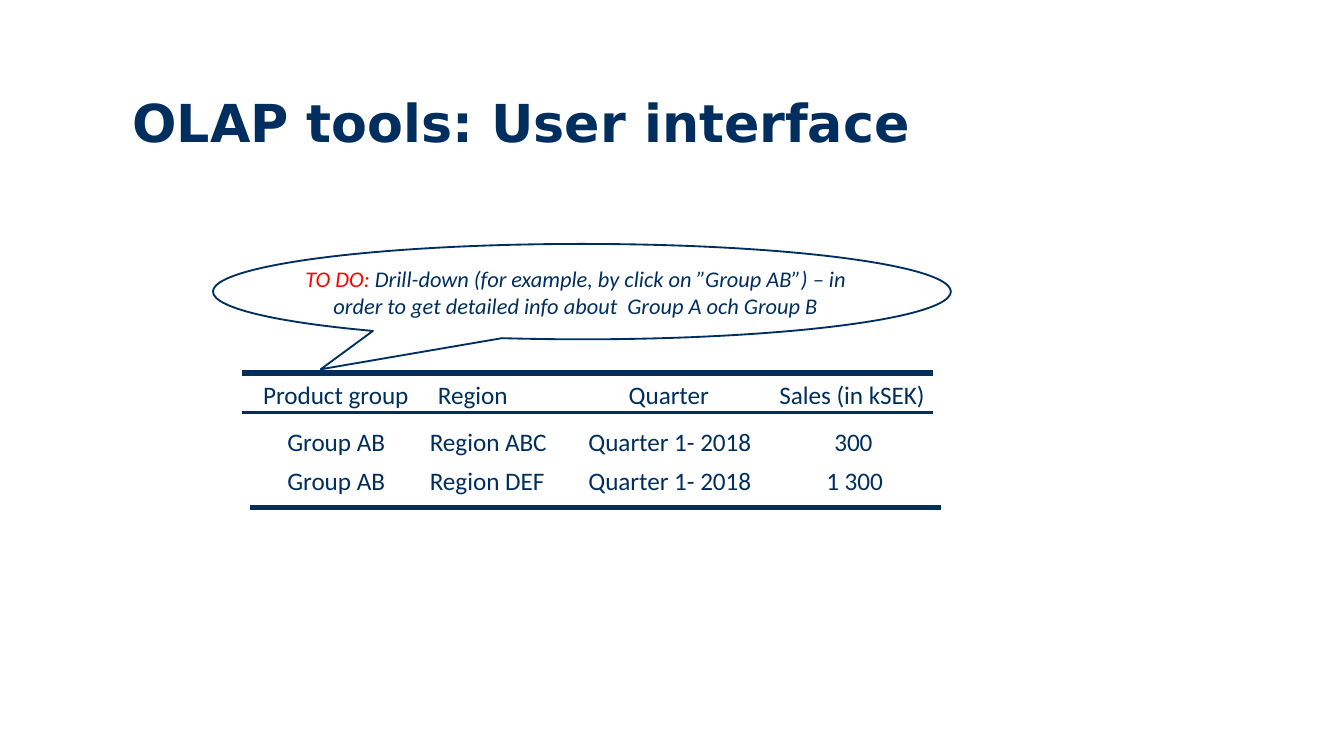
from lxml import etree
from pptx import Presentation
from pptx.dml.color import RGBColor
from pptx.enum.shapes import MSO_CONNECTOR, MSO_SHAPE
from pptx.enum.text import MSO_ANCHOR, MSO_AUTO_SIZE, PP_ALIGN
from pptx.oxml.ns import qn
from pptx.util import Pt

PX = 4572  # 200 px to the inch
NAVY = RGBColor(0x00, 0x2F, 0x5F)
RULE_NAVY = RGBColor(0x00, 0x2E, 0x5D)
RED = RGBColor(0xFF, 0x00, 0x00)
WHITE = RGBColor(0xFF, 0xFF, 0xFF)
STRAIGHT = MSO_CONNECTOR.STRAIGHT
CALLOUT = MSO_SHAPE.OVAL_CALLOUT
MIDDLE = MSO_ANCHOR.MIDDLE
GROW = MSO_AUTO_SIZE.SHAPE_TO_FIT_TEXT
LEFT, CENTER = PP_ALIGN.LEFT, PP_ALIGN.CENTER

TITLE_FONT = {"name": "DejaVu Sans", "size": Pt(28), "bold": True}
CELL_FONT = {"name": "Calibri", "size": Pt(13.5)}
HINT_FONT = {"name": "Calibri", "size": Pt(12), "italic": True}

TITLE_ONLY = 5
ROW_HEIGHT = 66
ROW_TOPS = (0, 70, 128)
# Each cell: left, width, text
COLUMNS = (
    ((12, 272, "Product group"), (48, 200, "Group AB"), (48, 200, "Group AB")),
    ((272, 272, "Region"), (260, 248, "Region ABC"), (260, 248, "Region DEF")),
    ((556, 272, "Quarter"), (496, 330, "Quarter 1- 2018"), (496, 312, "Quarter 1- 2018")),
    ((780, 330, "Sales (in kSEK)"), (862, 272, "300"), (850, 272, "1 300")),
)
# Each rule: left, top, line width in points
RULES = ((0, 0, 3), (12, 200, 3), (0, 59, 1.5))


def emu(*lengths):
    return [length * PX for length in lengths]


def add_run(paragraph, text, font_values, color):
    run = paragraph.add_run()
    run.text = text
    for attribute, value in font_values.items():
        setattr(run.font, attribute, value)
    run.font.color.rgb = color


def add_text(slide, box, runs, font_values, align=LEFT):
    frame = slide.shapes.add_textbox(*emu(*box)).text_frame
    frame.word_wrap = True
    frame.auto_size = GROW
    paragraph = frame.paragraphs[0]
    paragraph.alignment = align
    for text, color in runs:
        add_run(paragraph, text, font_values, color)


def add_title(slide, box):
    title = slide.shapes.title
    title.left, title.top, title.width, title.height = emu(*box)
    title.text_frame.vertical_anchor = MIDDLE
    title.text_frame.margin_bottom = 25 * PX
    heading = title.text_frame.paragraphs[0]
    heading.alignment = LEFT
    add_run(heading, "OLAP tools: User interface", TITLE_FONT, NAVY)


def add_sales_report(slide, box):
    left, top, width = box
    # Horizontal rules
    for x, y, weight in RULES:
        rule = slide.shapes.add_connector(
            STRAIGHT, *emu(left + x, top + y, left + x + width, top + y))
        rule.line.color.rgb = RULE_NAVY
        rule.line.width = Pt(weight)
        etree.SubElement(rule._element.spPr, qn("a:effectLst"))
    # Headings and values
    for column in COLUMNS:
        for row_top, (x, cell_width, text) in zip(ROW_TOPS, column):
            cell_box = (left + x, top + row_top, cell_width, ROW_HEIGHT)
            add_text(slide, cell_box, [(text, NAVY)], CELL_FONT)


def add_drill_down_hint(slide, box):
    left, top, width, height = box
    # Bubble pointing at the report
    bubble = slide.shapes.add_shape(CALLOUT, *emu(*box))
    bubble.adjustments[0], bubble.adjustments[1] = -0.354, 0.814
    bubble.shadow.inherit = False
    bubble.fill.solid()
    bubble.fill.fore_color.rgb = WHITE
    bubble.line.color.rgb = NAVY
    bubble.line.width = Pt(1)
    # Task text
    runs = [
        ("TO DO: ", RED),
        ("Drill-down (for example, by click on ”Group AB”) – in order to get "
         "detailed info about  Group A och Group B", NAVY),
    ]
    text_box = (left + 100, top + 22, width - 218, height - 42)
    add_text(slide, text_box, runs, HINT_FONT, CENTER)


def main():
    presentation = Presentation()
    presentation.slide_width, presentation.slide_height = emu(2000, 1125)
    slide = presentation.slides.add_slide(presentation.slide_layouts[TITLE_ONLY])
    add_title(slide, (177, 124, 1304, 130))
    add_sales_report(slide, (360, 555, 1028))
    add_drill_down_hint(slide, (317, 363, 1098, 142))
    presentation.save("out.pptx")


if __name__ == "__main__":
    main()
